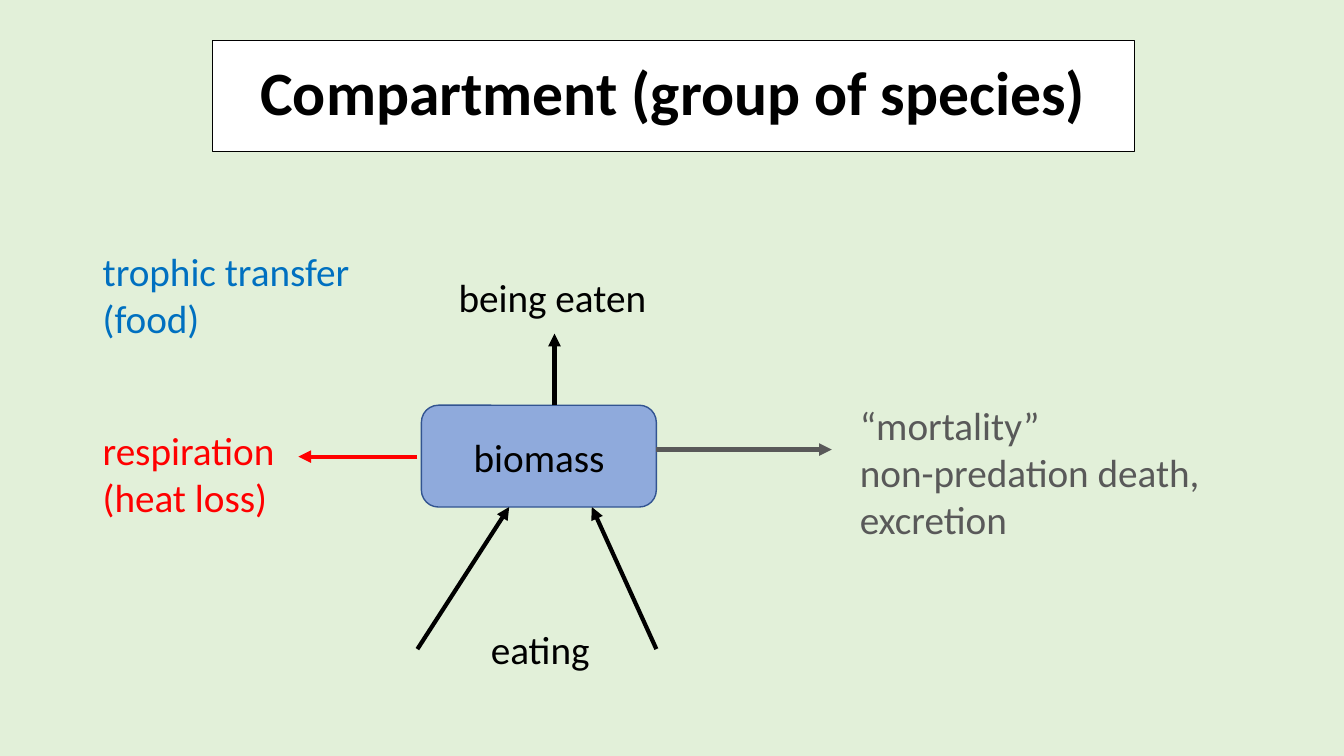
from lxml import etree
from pptx import Presentation
from pptx.dml.color import RGBColor
from pptx.enum.shapes import MSO_CONNECTOR as CONN, MSO_SHAPE as SHAPE
from pptx.enum.text import MSO_ANCHOR as ANCHOR, PP_ALIGN as ALIGN
from pptx.oxml.ns import qn
from pptx.util import Pt

PX = 9144
FONT = "Calibri"
COLORS = {
    "background": "E2F0D9",
    "title": "FFFFFF",
    "biomass": "8FAADC",
    "outline": "325491",
    "feeding": "000000",
    "respiration": "FF0000",
    "mortality": "595959",
    "transfer": "0070C0",
}


def px(*lengths):
    return [n * PX for n in lengths]


def rgb(name):
    return RGBColor.from_string(COLORS[name])


def write(tf, text, size=28, color="feeding", bold=False, align=ALIGN.LEFT,
          anchor=ANCHOR.TOP, spacing=None):
    tf.word_wrap = True
    tf.vertical_anchor = anchor
    for i, line in enumerate(text.split("\n")):
        p = tf.add_paragraph() if i else tf.paragraphs[0]
        p.alignment = align
        p.line_spacing = spacing
        r = p.add_run()
        r.text = line
        r.font.name = FONT
        r.font.size = Pt(size)
        r.font.bold = bold
        r.font.color.rgb = rgb(color)


def add_box(s, kind, box, fill, line, width):
    sp = s.shapes.add_shape(kind, *px(*box))
    sp.shadow.inherit = False
    sp.fill.solid()
    sp.fill.fore_color.rgb = rgb(fill)
    sp.line.color.rgb = rgb(line)
    sp.line.width = Pt(width)
    return sp


def add_label(s, box, text, **fmt):
    write(s.shapes.add_textbox(*px(*box)).text_frame, text, **fmt)


def add_arrow(s, start, end, color):
    cn = s.shapes.add_connector(CONN.STRAIGHT, *px(*start, *end))
    cn.line.width = Pt(3)
    cn.line.color.rgb = rgb(color)
    sp_pr = cn._element.spPr
    etree.SubElement(sp_pr.find(qn("a:ln")), qn("a:tailEnd"), type="triangle")
    etree.SubElement(sp_pr, qn("a:effectLst"))


def add_title(s, box):
    sp = add_box(s, SHAPE.RECTANGLE, box, "title", "feeding", 0.75)
    write(sp.text_frame, "Compartment (group of species)", size=44, bold=True,
          align=ALIGN.CENTER, anchor=ANCHOR.MIDDLE, spacing=0.9)


def add_compartment(s, box):
    x, y, w, h = box
    right, bottom = x + w, y + h
    add_box(s, SHAPE.ROUNDED_RECTANGLE, box, "biomass", "outline", 1)

    arrows = [
        ((x - 4, bottom + 141), (x + 87, bottom), "feeding"),
        ((right, bottom + 141), (right - 64, bottom), "feeding"),
        ((x + 132, y), (x + 132, y - 71), "feeding"),
        ((x - 4, y + 51), (x - 122, y + 51), "respiration"),
        ((right, y + 44), (right + 174, y + 44), "mortality"),
    ]
    for start, end, color in arrows:
        add_arrow(s, start, end, color)

    labels = [
        ((x + 42, y + 23, 203, 57), "biomass", "feeding"),
        ((x + 27, y - 136, 283, 57), "being eaten", "feeding"),
        ((x + 59, bottom + 112, 283, 57), "eating", "feeding"),
        ((x - 326, y + 16, 207, 104), "respiration\n(heat loss)", "respiration"),
        ((x - 326, y - 162, 283, 104), "trophic transfer\n(food)", "transfer"),
        ((right + 192, y - 9, 385, 151),
         "“mortality”\nnon-predation death, excretion", "mortality"),
    ]
    for place, text, color in labels:
        add_label(s, place, text, color=color)


def main():
    prs = Presentation()
    prs.slide_width, prs.slide_height = px(1333, 750)
    s = prs.slides.add_slide(prs.slide_layouts[6])
    s.background.fill.solid()
    s.background.fill.fore_color.rgb = rgb("background")
    add_title(s, (211, 40, 914, 110))
    add_compartment(s, (418, 402, 233, 101))
    prs.save("out.pptx")


if __name__ == "__main__":
    main()
